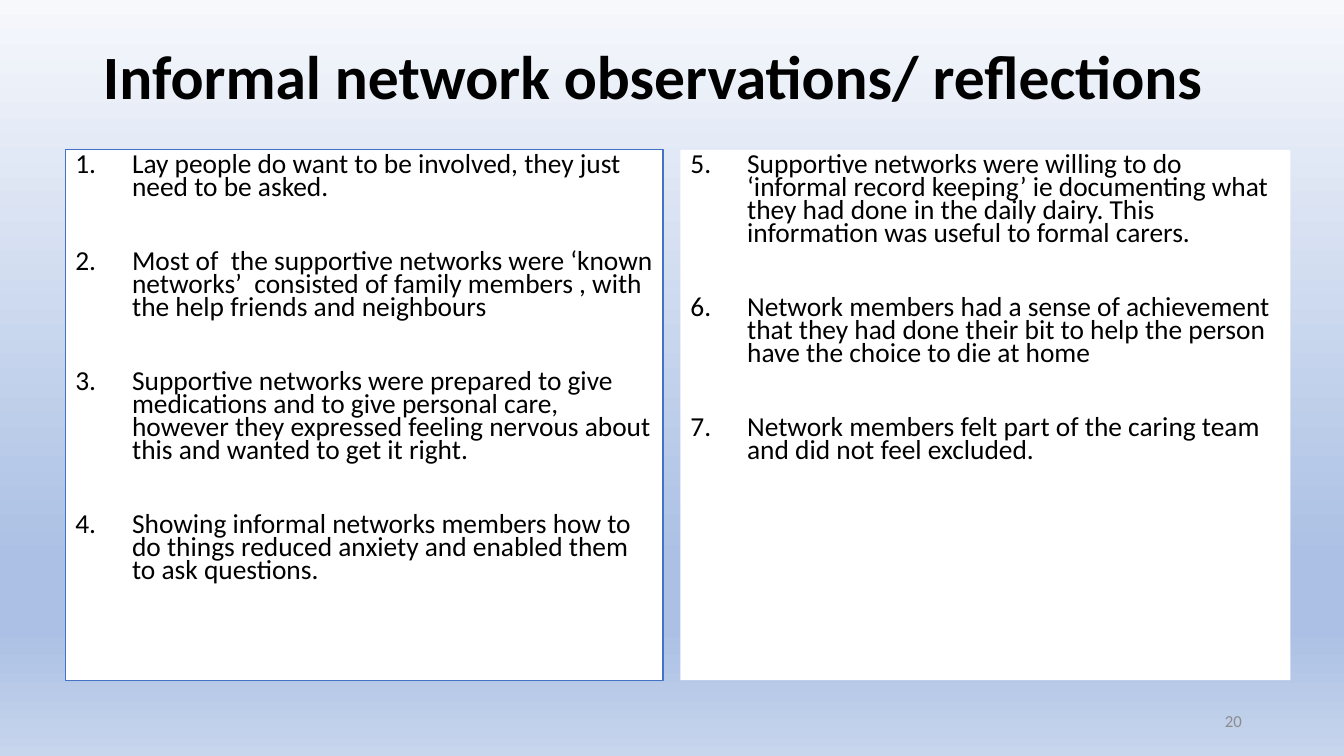
from dataclasses import dataclass
from typing import Optional

from lxml import etree
from pptx import Presentation
from pptx.dml.color import RGBColor
from pptx.enum import shapes, text
from pptx.oxml.ns import qn
from pptx.util import Cm, Pt


@dataclass(frozen=True)
class Theme:
    font: str = "Calibri"
    ink: str = "000000"
    panel: str = "FFFFFF"
    border: str = "4472C4"
    muted: str = "8C8C8C"
    title_size: float = 44
    body_size: float = 19.6
    number_size: float = 12
    backdrop: tuple = ((0, "F6F8FC"), (74, "ABC0E4"), (83, "ABC0E4"), (100, "C7D5ED"))


@dataclass(frozen=True)
class Panel:
    left: float
    width: float
    start: int
    items: tuple
    border: Optional[str] = None


THEME = Theme()
PANEL_TOP, PANEL_HEIGHT = 3.78, 13.36
INDENT = Cm(1.43)
ITEM_GAP = 36.5

PANELS = (
    Panel(1.65, 15.06, 1, (
        "Lay people do want to be involved, they just need to be asked.",
        "Most of  the supportive networks were ‘known networks’  consisted of family members , "
        "with the help friends and neighbours",
        "Supportive networks were prepared to give medications and to give personal care, "
        "however they expressed feeling nervous about this and wanted to get it right.",
        "Showing informal networks members how to do things reduced anxiety and enabled them "
        "to ask questions.",
    ), THEME.border),
    Panel(17.15, 15.37, 5, (
        "Supportive networks were willing to do ‘informal record keeping’ ie documenting what "
        "they had done in the daily dairy. This information was useful to formal carers.",
        "Network members had a sense of achievement that they had done their bit to help the "
        "person have the choice to die at home",
        "Network members felt part of the caring team and did not feel excluded.",
    )),
)


def write(p, content: str, *, size: float, color: str = THEME.ink, bold: bool = False,
          align=text.PP_ALIGN.LEFT, spacing: float = 1.0, before: float = 0) -> None:
    p.alignment = align
    p.line_spacing = spacing
    p.space_before = Pt(before)
    r = p.add_run()
    r.text = content
    r.font.name = THEME.font
    r.font.size = Pt(size)
    r.font.bold = bold
    r.font.color.rgb = RGBColor.from_string(color)


def number_item(p, start: int) -> None:
    pPr = p._p.get_or_add_pPr()
    pPr.set("marL", str(INDENT))
    pPr.set("indent", str(-INDENT))
    etree.SubElement(pPr, qn("a:buFont"), typeface="+mj-lt")
    etree.SubElement(pPr, qn("a:buAutoNum"), type="arabicPeriod", startAt=str(start))


def paint_background(s) -> None:
    fill = s.background.fill
    fill.gradient()
    fill.gradient_angle = 270
    stops = next(s.element.iter(qn("a:gsLst")))
    for stop in list(stops):
        stops.remove(stop)
    for percent, color in THEME.backdrop:
        stop = etree.SubElement(stops, qn("a:gs"), pos=str(percent * 1000))
        etree.SubElement(stop, qn("a:srgbClr"), val=color)


def add_title(s, content: str) -> None:
    sp = s.shapes.title
    sp.left, sp.top, sp.width, sp.height = Cm(2.34), Cm(1.02), Cm(29.21), Cm(3.68)
    tf = sp.text_frame
    tf.auto_size = text.MSO_AUTO_SIZE.NONE
    tf.vertical_anchor = text.MSO_ANCHOR.MIDDLE
    tf.margin_bottom = Cm(1.83)
    write(tf.paragraphs[0], content, size=THEME.title_size, bold=True, spacing=0.9)


def add_panel(s, panel: Panel) -> None:
    sp = s.shapes.add_shape(shapes.MSO_SHAPE.RECTANGLE, Cm(panel.left), Cm(PANEL_TOP),
                            Cm(panel.width), Cm(PANEL_HEIGHT))
    sp.shadow.inherit = False
    sp.fill.solid()
    sp.fill.fore_color.rgb = RGBColor.from_string(THEME.panel)
    if panel.border:
        sp.line.color.rgb = RGBColor.from_string(panel.border)
        sp.line.width = Pt(0.75)
    else:
        sp.line.fill.background()
    tf = sp.text_frame
    tf.word_wrap = True
    tf.vertical_anchor = text.MSO_ANCHOR.TOP
    for i, item in enumerate(panel.items):
        p = tf.add_paragraph() if i else tf.paragraphs[0]
        write(p, item, size=THEME.body_size, spacing=0.7, before=ITEM_GAP if i else 0)
        number_item(p, panel.start)


def add_page_number(s, number: int) -> None:
    sp = s.shapes.add_textbox(Cm(23.93), Cm(17.65), Cm(7.62), Cm(1.02))
    tf = sp.text_frame
    tf.word_wrap = True
    tf.vertical_anchor = text.MSO_ANCHOR.MIDDLE
    write(tf.paragraphs[0], str(number), size=THEME.number_size, color=THEME.muted,
          align=text.PP_ALIGN.RIGHT)


def main() -> None:
    prs = Presentation()
    prs.slide_width, prs.slide_height = Cm(33.87), Cm(19.05)
    s = prs.slides.add_slide(prs.slide_layouts.get_by_name("Title Only"))
    paint_background(s)
    add_title(s, "Informal network observations/ reflections")
    for panel in PANELS:
        add_panel(s, panel)
    add_page_number(s, 20)
    prs.save("out.pptx")


if __name__ == "__main__":
    main()
